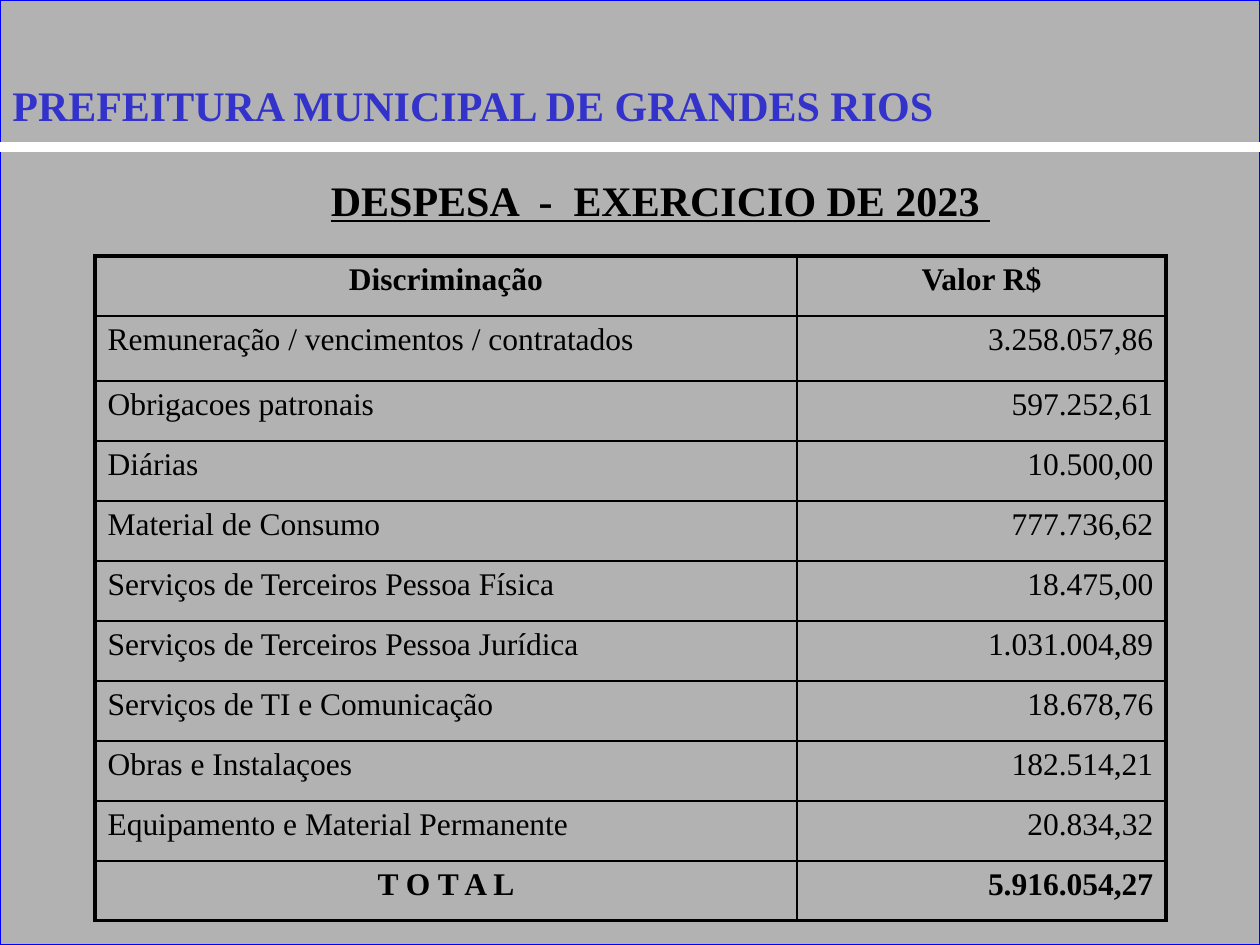
from typing import NamedTuple

from lxml import etree
from pptx import Presentation
from pptx.dml.color import RGBColor
from pptx.enum.shapes import MSO_CONNECTOR, MSO_SHAPE
from pptx.enum.text import MSO_ANCHOR, MSO_AUTO_SIZE, PP_ALIGN
from pptx.oxml.ns import qn
from pptx.util import Emu, Pt

LEFT, CENTER, RIGHT = PP_ALIGN.LEFT, PP_ALIGN.CENTER, PP_ALIGN.RIGHT
FONT = "Times New Roman"
COLORS = {
    "background": "B2B2B2",
    "frame": "0000FF",
    "rule": "FFFFFF",
    "text": "000000",
    "heading": "3333CC",
    "shadow": "808080",
}
SLIDE_W, SLIDE_H = 1260, 945
RULE_Y = 147
THICK, THIN = 2.25, 1
COLUMN_WIDTHS = (702, 369)
ROW_H, FIRST_EXPENSE_H = 60, 65


class Box(NamedTuple):
    left: int
    top: int
    width: int
    height: int


class Expense(NamedTuple):
    label: str
    value: str
    label_align: PP_ALIGN = LEFT
    value_align: PP_ALIGN = RIGHT
    bold: bool = False


TITLE_BOX = Box(174, 168, 973, 140)
HEADING_BOX = Box(0, 73, 1037, 63)
TABLE_BOX = Box(95, 256, sum(COLUMN_WIDTHS), 10 * ROW_H + FIRST_EXPENSE_H)

EXPENSES = [
    Expense("Discriminação", "Valor R$", CENTER, CENTER, True),
    Expense("Remuneração / vencimentos / contratados", "3.258.057,86"),
    Expense("Obrigacoes patronais", "597.252,61"),
    Expense("Diárias", "10.500,00"),
    Expense("Material de Consumo", "777.736,62"),
    Expense("Serviços de Terceiros Pessoa Física", "18.475,00"),
    Expense("Serviços de Terceiros Pessoa Jurídica", "1.031.004,89"),
    Expense("Serviços de TI e Comunicação", "18.678,76"),
    Expense("Obras e Instalaçoes", "182.514,21"),
    Expense("Equipamento e Material Permanente", "20.834,32"),
    Expense("T O T A L", "5.916.054,27", CENTER, RIGHT, True),
]


def px(length: int) -> Emu:
    return Emu(round(length * 914400 / 126))


def rgb(name: str) -> RGBColor:
    return RGBColor.from_string(COLORS[name])


def add_color(parent, name: str) -> None:
    etree.SubElement(parent, qn("a:srgbClr"), val=COLORS[name])


def write(frame, text: str, size: int, align: PP_ALIGN, space_percent: int,
          color: str = "text", bold: bool = True, underline: bool = False):
    """Write one paragraph, spaced in percent of its line, and return its run."""
    paragraph = frame.paragraphs[0]
    paragraph.alignment = align
    paragraph.line_spacing = 1.0
    paragraph.space_before = Pt(0)
    space = paragraph._p.pPr.find(qn("a:spcBef"))
    space.clear()
    etree.SubElement(space, qn("a:spcPct"), val=str(space_percent * 1000))
    run = paragraph.add_run()
    run.text = text
    font = run.font
    font.name, font.size = FONT, Pt(size)
    font.bold, font.underline = bold, underline
    font.color.rgb = rgb(color)
    return run


def place(shape, box: Box) -> None:
    shape.left, shape.top, shape.width, shape.height = map(px, box)
    frame = shape.text_frame
    frame.word_wrap = True
    frame.auto_size = MSO_AUTO_SIZE.SHAPE_TO_FIT_TEXT
    frame.vertical_anchor = MSO_ANCHOR.TOP


def add_text_shadow(run) -> None:
    fill = run._r.rPr.find(qn("a:solidFill"))
    effects = etree.Element(qn("a:effectLst"))
    shadow = etree.SubElement(effects, qn("a:outerShdw"), dist="35921", dir="2700000")
    add_color(shadow, "shadow")
    fill.addnext(effects)


def set_borders(cell, widths: dict[str, float]) -> None:
    properties = cell._tc.get_or_add_tcPr()
    for index, (side, width) in enumerate(widths.items()):
        line = etree.Element(qn(f"a:ln{side}"), w=str(Pt(width)))
        add_color(etree.SubElement(line, qn("a:solidFill")), "text")
        properties.insert(index, line)


def add_backdrop(slide) -> None:
    backdrop = slide.shapes.add_shape(
        MSO_SHAPE.RECTANGLE, 0, 0, px(SLIDE_W), px(SLIDE_H))
    backdrop.shadow.inherit = False
    backdrop.fill.solid()
    backdrop.fill.fore_color.rgb = rgb("background")
    backdrop.line.color.rgb = rgb("frame")
    backdrop.line.width = Pt(0.75)

    rule = slide.shapes.add_connector(
        MSO_CONNECTOR.STRAIGHT, 0, px(RULE_Y), px(SLIDE_W), px(RULE_Y))
    rule.line.color.rgb = rgb("rule")
    rule.line.width = Pt(6)
    etree.SubElement(rule.element.spPr, qn("a:effectLst"))


def add_expense_table(slide, expenses: list[Expense]) -> None:
    last = len(expenses) - 1
    table = slide.shapes.add_table(
        len(expenses), len(COLUMN_WIDTHS), *map(px, TABLE_BOX)).table
    table.first_row = table.horz_banding = False
    for column, width in zip(table.columns, COLUMN_WIDTHS):
        column.width = px(width)
    for r, expense in enumerate(expenses):
        table.rows[r].height = px(FIRST_EXPENSE_H if r == 1 else ROW_H)
        entries = ((expense.label, expense.label_align),
                   (expense.value, expense.value_align))
        for c, (text, align) in enumerate(entries):
            cell = table.cell(r, c)
            cell.fill.background()
            write(cell.text_frame, text, 18, align, 20, bold=expense.bold)
            set_borders(cell, {
                "L": THICK if c == 0 else THIN,
                "R": THICK if c == 1 else THIN,
                "T": THICK if r == 0 else THIN,
                "B": THICK if r == last else THIN,
            })


def main() -> None:
    presentation = Presentation()
    presentation.slide_width, presentation.slide_height = px(SLIDE_W), px(SLIDE_H)
    slide = presentation.slides.add_slide(presentation.slide_layouts[5])

    # Grey page and white rule
    add_backdrop(slide)

    # Title, raised above the grey page
    title = slide.shapes.title
    title.element.getparent().append(title.element)
    place(title, TITLE_BOX)
    write(title.text_frame, "DESPESA  -  EXERCICIO DE 2023 ", 24, CENTER, 50,
          underline=True)

    # Name of the municipality
    heading = slide.shapes.add_textbox(*map(px, HEADING_BOX))
    place(heading, HEADING_BOX)
    heading_run = write(heading.text_frame, "PREFEITURA MUNICIPAL DE GRANDES RIOS",
                        24, LEFT, 50, color="heading")
    add_text_shadow(heading_run)

    # Expenses
    add_expense_table(slide, EXPENSES)

    presentation.save("out.pptx")


if __name__ == "__main__":
    main()
